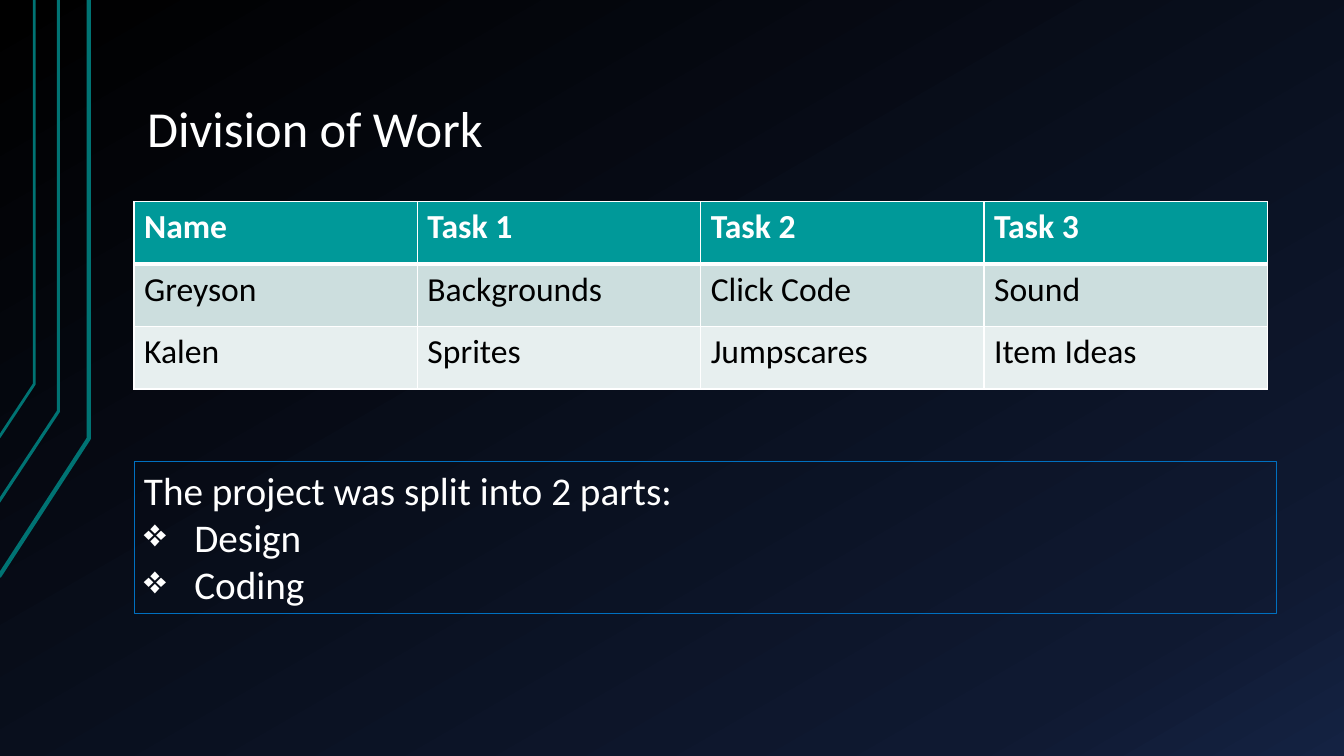
import copy

import lxml.etree
import pptx
import pptx.dml.color
import pptx.enum.shapes
import pptx.enum.text
import pptx.oxml.ns
import pptx.util

PX = 9144  # EMU per px, 100 px to the inch
FONT = "Calibri"
COLORS = {
    "white": "FFFFFF",
    "black": "000000",
    "night": "0F1931",
    "navy": "142242",
    "teal": "007373",
    "header": "009999",
    "band_dark": "CCDEDE",
    "band_light": "E7EFEF",
    "frame": "0070C0",
}
BACKGROUND_STOPS = [(0, "black"), (0.85, "night"), (1, "navy")]
# Points of each line, then its width in pt
CIRCUIT_LINES = [
    ([(-1, 572), (88, 435), (88, 0)], 3),
    ([(-2, 499), (58, 408), (58, 0)], 2.25),
    ([(-1, 434), (34, 381), (34, 0)], 2),
]
TASKS = [
    ["Name", "Task 1", "Task 2", "Task 3"],
    ["Greyson", "Backgrounds", "Click Code", "Sound"],
    ["Kalen", "Sprites", "Jumpscares", "Item Ideas"],
]
ROW_FILLS = ["header", "band_dark", "band_light"]
COLUMN_WIDTH, ROW_HEIGHT = 281, 62
LEFT, CONTENT_WIDTH = 133, 1133


def px(*lengths):
    return [pptx.util.Emu(length * PX) for length in lengths]


def rgb(name):
    return pptx.dml.color.RGBColor.from_string(COLORS[name])


def add_xml(parent, tag, **attributes):
    return lxml.etree.SubElement(parent, pptx.oxml.ns.qn(tag), attributes)


def write_text(paragraph, text, size=24, color="white", bold=False, spacing=None, bullet=None):
    paragraph.alignment = pptx.enum.text.PP_ALIGN.LEFT
    if spacing:
        paragraph.line_spacing = spacing
    if bullet:
        properties = paragraph._p.get_or_add_pPr()
        indent = 50 * PX
        properties.set("marL", str(indent))
        properties.set("indent", str(-indent))
        add_xml(properties, "a:buChar", char=bullet)
    run = paragraph.add_run()
    run.text = text
    run.font.name = FONT
    run.font.size = pptx.util.Pt(size)
    run.font.bold = bold
    run.font.color.rgb = rgb(color)


def paint_background(slide):
    fill = slide.background.fill
    fill.gradient()
    fill.gradient_angle = 300  # counter-clockwise
    stop_list = next(slide.element.iter(pptx.oxml.ns.qn("a:gsLst")))
    stop_list.append(copy.deepcopy(stop_list[-1]))
    for stop, (position, color) in zip(fill.gradient_stops, BACKGROUND_STOPS):
        stop.position = position
        stop.color.rgb = rgb(color)


def add_circuit_line(slide, points, width):
    builder = slide.shapes.build_freeform(*points[0], scale=PX)
    builder.add_line_segments(points[1:], close=False)
    shape = builder.convert_to_shape()
    shape.shadow.inherit = False
    shape.fill.background()
    shape.line.color.rgb = rgb("teal")
    shape.line.width = pptx.util.Pt(width)


def add_title(slide, text):
    frame = slide.shapes.add_textbox(*px(LEFT, 30, CONTENT_WIDTH, 134)).text_frame
    frame.word_wrap = True
    frame.vertical_anchor = pptx.enum.text.MSO_ANCHOR.BOTTOM
    frame.margin_left, frame.margin_right = px(13, 13)
    frame.margin_top, frame.margin_bottom = px(7, 7)
    write_text(frame.paragraphs[0], text, size=36, spacing=0.9)


def add_border(cell, side, width):
    line = add_xml(cell._tc.get_or_add_tcPr(), f"a:ln{side}", w=str(pptx.util.Pt(width)))
    add_xml(add_xml(line, "a:solidFill"), "a:srgbClr", val=COLORS["white"])


def add_task_table(slide):
    row_count, column_count = len(TASKS), len(TASKS[0])
    table = slide.shapes.add_table(
        row_count, column_count,
        *px(LEFT, 200, column_count * COLUMN_WIDTH, row_count * ROW_HEIGHT),
    ).table
    for row_index, (texts, fill) in enumerate(zip(TASKS, ROW_FILLS)):
        is_header = row_index == 0
        # The rule under the header is thicker
        top = 3 if row_index == 1 else 1
        bottom = 3 if is_header else 1
        for column_index, text in enumerate(texts):
            cell = table.cell(row_index, column_index)
            for side, width in (("L", 1), ("R", 1), ("T", top), ("B", bottom)):
                add_border(cell, side, width)
            cell.fill.solid()
            cell.fill.fore_color.rgb = rgb(fill)
            write_text(cell.text_frame.paragraphs[0], text,
                       color="white" if is_header else "black", bold=is_header)


def add_summary_box(slide, heading, parts):
    box = slide.shapes.add_shape(
        pptx.enum.shapes.MSO_SHAPE.RECTANGLE, *px(LEFT, 458, CONTENT_WIDTH, 151))
    box.shadow.inherit = False
    box.fill.background()
    box.line.color.rgb = rgb("frame")
    box.line.width = pptx.util.Pt(0.75)
    frame = box.text_frame
    frame.word_wrap = True
    frame.vertical_anchor = pptx.enum.text.MSO_ANCHOR.TOP
    write_text(frame.paragraphs[0], heading, size=28)
    for part in parts:
        write_text(frame.add_paragraph(), part, size=28, bullet="❖")


def main():
    presentation = pptx.Presentation()
    presentation.slide_width, presentation.slide_height = px(1333, 750)
    slide = presentation.slides.add_slide(presentation.slide_layouts[6])

    # Backdrop
    paint_background(slide)
    for points, width in CIRCUIT_LINES:
        add_circuit_line(slide, points, width)

    # Content
    add_title(slide, "Division of Work")
    add_task_table(slide)
    add_summary_box(slide, "The project was split into 2 parts:", ["Design", "Coding"])

    presentation.save("out.pptx")


if __name__ == "__main__":
    main()
